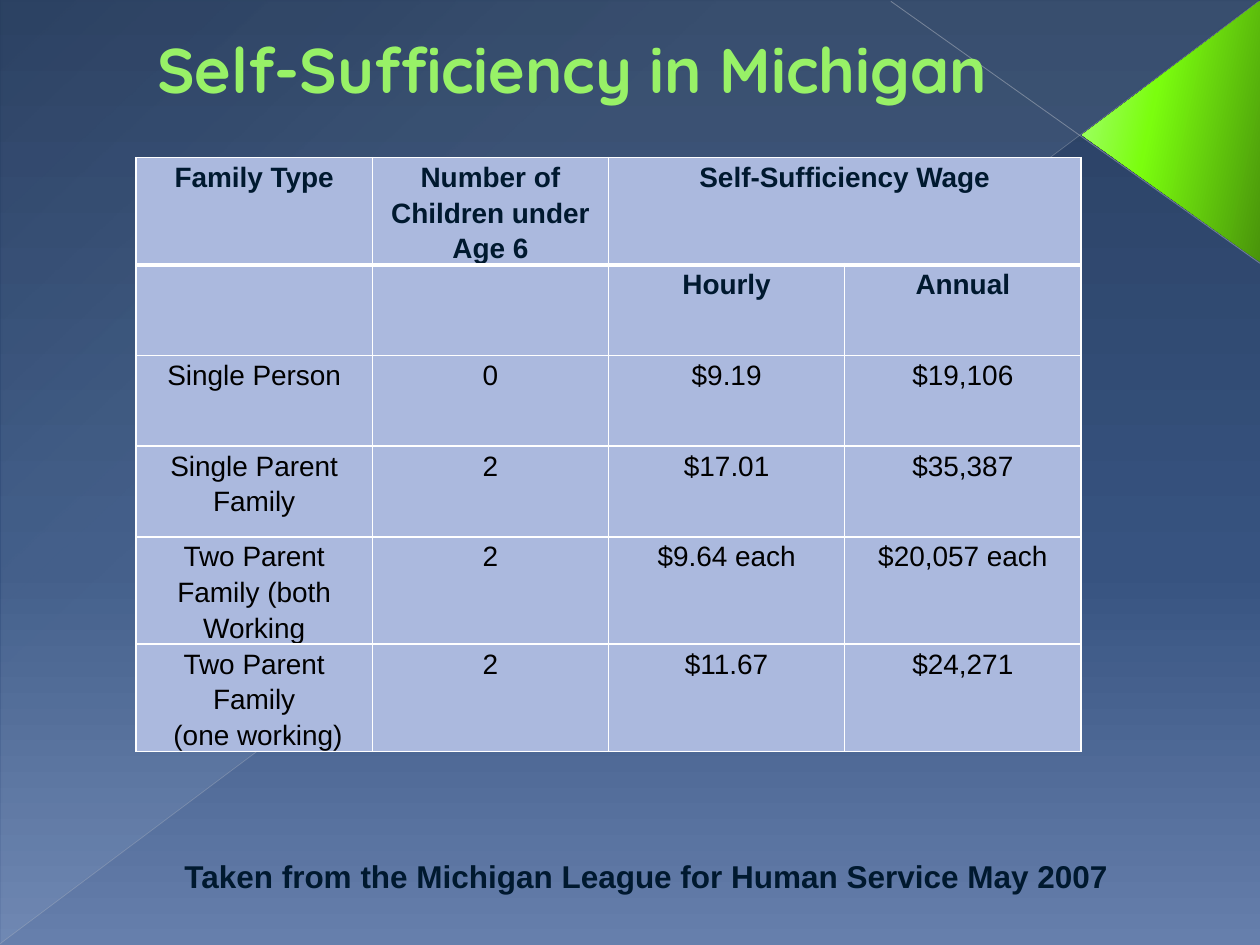
from lxml import etree
from pptx import Presentation
from pptx.dml.color import RGBColor
from pptx.enum.shapes import MSO_CONNECTOR, MSO_SHAPE
from pptx.enum.text import MSO_ANCHOR, MSO_AUTO_SIZE, PP_ALIGN
from pptx.oxml.ns import qn
from pptx.util import Inches, Pt

CENTER = PP_ALIGN.CENTER
MIDDLE = MSO_ANCHOR.MIDDLE
NO_AUTOFIT = MSO_AUTO_SIZE.NONE
FIT_SHAPE = MSO_AUTO_SIZE.SHAPE_TO_FIT_TEXT
STRAIGHT = MSO_CONNECTOR.STRAIGHT
TRIANGLE = MSO_SHAPE.ISOSCELES_TRIANGLE
RIGHT_TRIANGLE = MSO_SHAPE.RIGHT_TRIANGLE

NAVY, BLACK, WHITE, CELL_BLUE = "00192F", "000000", "FFFFFF", "ABB9DE"
HEADER_ROWS = 2
ROW_HEIGHTS = [0.68] + [0.72] * 5
WAGES = [
    ["Family Type", "Number of Children under Age 6", "Self-Sufficiency Wage", ""],
    ["", "", "Hourly", "Annual"],
    ["Single Person", "0", "$9.19", "$19,106"],
    ["Single Parent Family", "2", "$17.01", "$35,387"],
    ["Two Parent Family (both Working", "2", "$9.64 each", "$20,057 each"],
    ["Two Parent Family\n (one working)", "2", "$11.67", "$24,271"],
]


def color(value):
    return RGBColor.from_string(value)


def add_child(parent, tag, **attributes):
    child = etree.SubElement(parent, qn(tag))
    for name, value in attributes.items():
        child.set(name, str(value))
    return child


def add_solid_color(parent, value, opacity=100):
    solid = add_child(parent, "a:solidFill")
    add_child(add_child(solid, "a:srgbClr", val=value), "a:alpha", val=opacity * 1000)


def set_gradient(fill, owner, stops, angle):
    """Fill with (position, colour, opacity) stops, in percent; angle is clockwise."""
    fill.gradient()
    gradient = owner.find(".//" + qn("a:gradFill"))
    for child in list(gradient):
        gradient.remove(child)
    gradient.set("rotWithShape", "1")
    stop_list = add_child(gradient, "a:gsLst")
    for position, value, opacity in stops:
        stop = add_child(stop_list, "a:gs", pos=position * 1000)
        add_child(add_child(stop, "a:srgbClr", val=value), "a:alpha", val=opacity * 1000)
    add_child(gradient, "a:lin", ang=angle * 60000, scaled=0)


def style_paragraph(paragraph, size, value, font_name="Arial", bold=True):
    paragraph.alignment = CENTER
    paragraph.font.name = font_name
    paragraph.font.size = Pt(size)
    paragraph.font.bold = bold
    paragraph.font.color.rgb = color(value)


def add_flipped_shape(slide, kind, box, stops, angle):
    shape = slide.shapes.add_shape(kind, *map(Inches, box))
    shape.shadow.inherit = False
    shape.line.fill.background()
    set_gradient(shape.fill, shape.element.spPr, stops, angle)
    shape.element.spPr.find(qn("a:xfrm")).set("flipV", "1")
    return shape


def add_thin_line(slide, ends, value, width, opacity):
    line = slide.shapes.add_connector(STRAIGHT, *map(Inches, ends))
    line.line.width = Pt(width)
    line.line.color.rgb = color(value)
    properties = line.element.spPr
    add_child(properties.find(".//" + qn("a:srgbClr")), "a:alpha", val=opacity * 1000)
    add_child(properties, "a:effectLst")


def add_backdrop(slide, width, height):
    background_stops = [(0, "293F60", 100), (60, "375380", 100), (100, "667FAC", 100)]
    set_gradient(slide.background.fill, slide.element, background_stops, 90)
    sheen = [(0, "D6ECFF", 10), (70, "D6ECFF", 8), (100, "D6ECFF", 1)]
    add_flipped_shape(slide, RIGHT_TRIANGLE, (0.01, 0.01, width - 0.01, height - 0.02), sheen, 133)
    green = [(0, "49940B", 100), (60, "7BFE0E", 100), (100, "A8FF7D", 100)]
    arrow = add_flipped_shape(slide, TRIANGLE, (width - 1.74, 0.34, 2.07, 1.41), green, 258)
    arrow.rotation = 90
    arrow.adjustments[0] = 0.513
    add_thin_line(slide, (width, 2.09, width - 2.93, 0.01), "BFC3CB", 0.47, 45)
    add_thin_line(slide, (0, height - 0.01, width - 0.01, 0.01), "B7BCC5", 0.39, 35)


def format_title(slide, box):
    title = slide.shapes.title
    title.element.getparent().append(title.element)  # bring in front of the backdrop
    title.left, title.top, title.width, title.height = map(Inches, box)
    frame = title.text_frame
    frame.text = "Self-Sufficiency in Michigan"
    frame.auto_size = NO_AUTOFIT
    frame.vertical_anchor = MIDDLE
    paragraph = frame.paragraphs[0]
    style_paragraph(paragraph, 36, "98F167", "Quicksand")
    run_properties = paragraph.runs[0]._r.get_or_add_rPr()
    add_solid_color(add_child(run_properties, "a:ln", w=Pt(0.5)), "589129")


def format_cell(cell, text, is_header, bottom_width):
    cell.margin_left = cell.margin_right = Inches(0.07)
    cell.margin_top = cell.margin_bottom = 0
    cell.text = text
    for paragraph in cell.text_frame.paragraphs:
        style_paragraph(paragraph, 16, NAVY if is_header else BLACK, bold=is_header)
        paragraph.line_spacing = 1.15
    properties = cell._tc.get_or_add_tcPr()
    for side, width in (("L", 1), ("R", 1), ("T", 1), ("B", bottom_width)):
        add_solid_color(add_child(properties, f"a:ln{side}", w=Pt(width)), WHITE)
    cell.fill.solid()
    cell.fill.fore_color.rgb = color(CELL_BLUE)


def add_wage_table(slide, box):
    table = slide.shapes.add_table(len(WAGES), len(WAGES[0]), *map(Inches, box)).table
    for row, height in zip(table.rows, ROW_HEIGHTS):
        row.height = Inches(height)
    for row_index, texts in enumerate(WAGES):
        for column_index, text in enumerate(texts):
            format_cell(table.cell(row_index, column_index), text,
                        row_index < HEADER_ROWS, 3 if row_index == 0 else 1)
    table.cell(0, 2).merge(table.cell(0, 3))


def add_source_note(slide, box):
    frame = slide.shapes.add_textbox(*map(Inches, box)).text_frame
    frame.text = "Taken from the Michigan League for Human Service May 2007"
    frame.word_wrap = False
    frame.auto_size = FIT_SHAPE
    frame.vertical_anchor = MIDDLE
    style_paragraph(frame.paragraphs[0], 18, NAVY)


def main():
    presentation = Presentation()
    presentation.slide_width, presentation.slide_height = Inches(10), Inches(7.5)
    slide = presentation.slides.add_slide(presentation.slide_layouts.get_by_name("Title Only"))
    add_backdrop(slide, 10, 7.5)
    format_title(slide, (0.58, 0, 7.92, 1.08))
    add_wage_table(slide, (1.08, 1.25, 7.5, sum(ROW_HEIGHTS)))
    add_source_note(slide, (1.33, 6.75, 7.6, 0.4))
    presentation.save("out.pptx")


if __name__ == "__main__":
    main()
